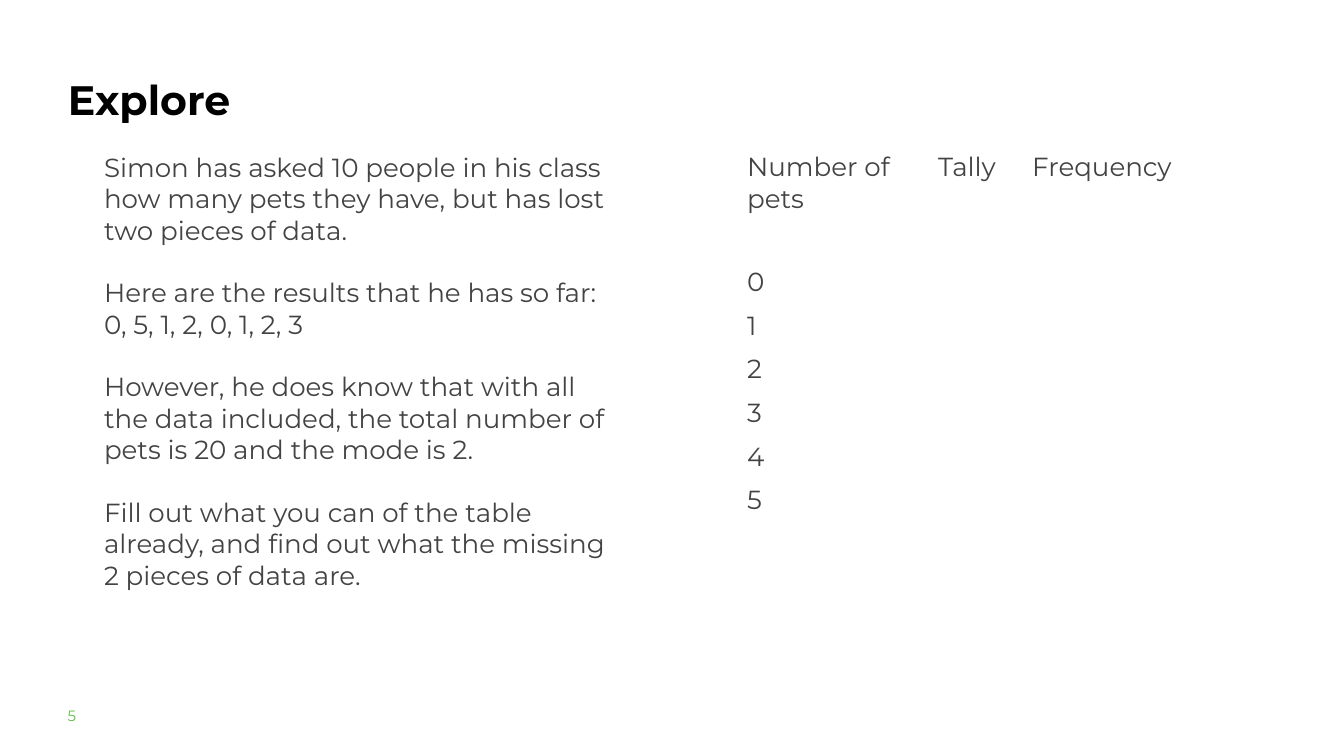
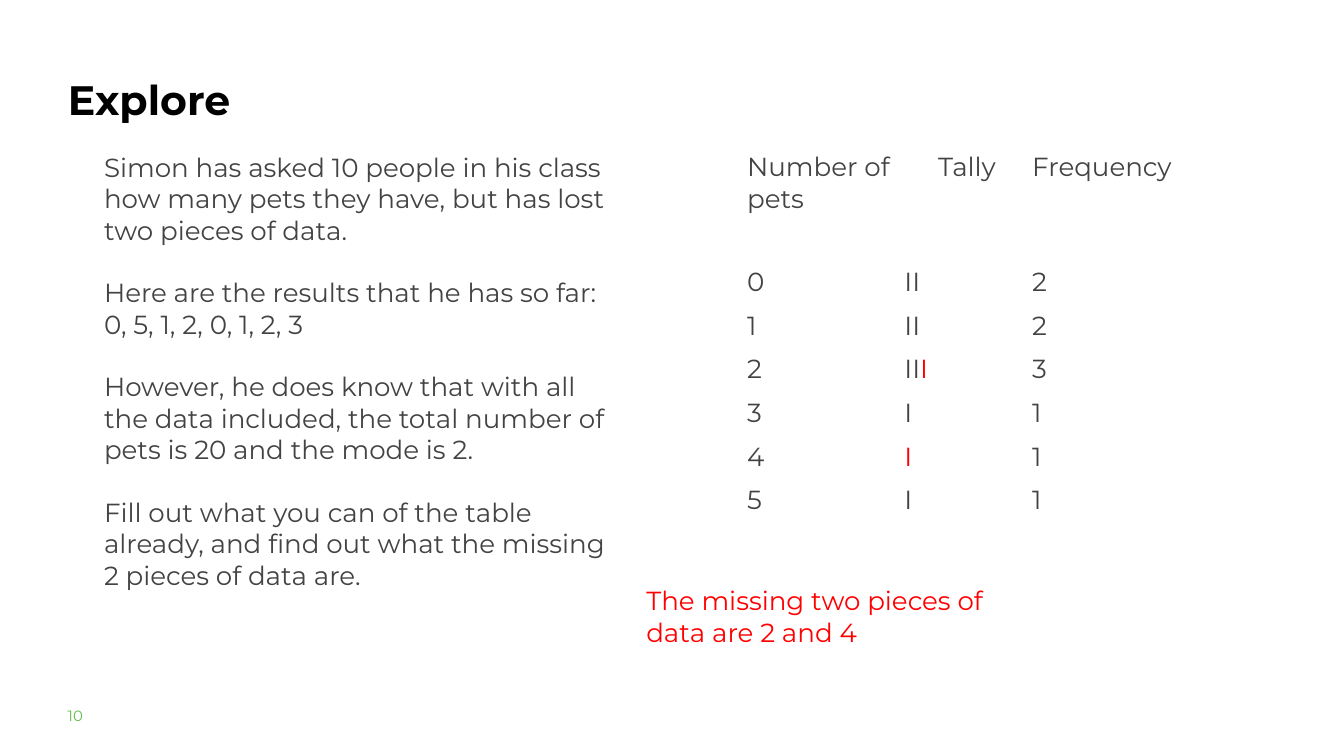
import pptx
import pptx.util
import pptx.dml.color

Pt = pptx.util.Pt
RGB = pptx.dml.color.RGBColor

FONT = "Montserrat"
BLACK = RGB(0x00, 0x00, 0x00)
GREY = RGB(0x43, 0x43, 0x43)
GREEN = RGB(0x65, 0xBE, 0x4B)
RED = RGB(0xFF, 0x00, 0x00)

BODY = 28
LINE = 33.6
TOP = 158.4
LEFT = 65.5
INDENT = 36

# Each group of paragraphs is set apart by one line.
TASK = [
    ["Simon has asked 10 people in his class how many pets they have, "
     "but has lost two pieces of data."],
    ["Here are the results that he has so far:", "0, 5, 1, 2, 0, 1, 2, 3"],
    ["However, he does know that with all the data included, "
     "the total number of pets is 20 and the mode is 2."],
    ["Fill out what you can of the table already, "
     "and find out what the missing 2 pieces of data are."],
]
HEADS = ["Number of pets", "Tally", "Frequency"]
COLS = [168.5, 136.8, 193.7]
HEAD_ROW, ROW = 123.1, 46.8
# Known tally, found tally and frequency for 0 to 5 pets
BLANK = [("", "", "")] * 6
SOLVED = [("II", "", "2"), ("II", "", "2"), ("II", "I", "3"),
          ("I", "", "1"), ("", "I", "1"), ("I", "", "1")]


def add_run(para, text, color, size=BODY, bold=False):
    run = para.add_run()
    run.text = text
    font = run.font
    font.name, font.size, font.bold = FONT, Pt(size), bold
    font.color.rgb = color


def add_box(slide, left, top, width, height):
    box = slide.shapes.add_textbox(Pt(left), Pt(top), Pt(width), Pt(height))
    box.text_frame.word_wrap = True
    return box.text_frame


def add_label(slide, place, text, color, size=BODY, bold=False, space=None):
    para = add_box(slide, *place).paragraphs[0]
    para.line_spacing = space
    add_run(para, text, color, size, bold)


def add_task(slide):
    frame = add_box(slide, 104.4, TOP, 560.9, 550)
    para = frame.paragraphs[0]
    for g, group in enumerate(TASK):
        for i, text in enumerate(group):
            if g or i:
                para = frame.add_paragraph()
            if g and not i:
                para.space_before = Pt(LINE)
            add_run(para, text, GREY)


def add_tally(slide, rows):
    """Draw the frequency table, with the found tally marks in red."""
    count = len(rows)
    table = slide.shapes.add_table(
        count + 1, len(COLS), Pt(793.4), Pt(TOP),
        Pt(sum(COLS)), Pt(HEAD_ROW + count * ROW)).table
    table.first_row = table.horz_banding = False
    for col, width in zip(table.columns, COLS):
        col.width = Pt(width)
    for row, height in zip(table.rows, [HEAD_ROW] + [ROW] * count):
        row.height = Pt(height)
    for cell in table.iter_cells():
        cell.fill.background()

    grid = [[[(head, GREY)] for head in HEADS]]
    for pets, (known, found, freq) in enumerate(rows):
        grid.append([[(str(pets), GREY)], [(known, GREY), (found, RED)],
                     [(freq, GREY)]])
    for r, line in enumerate(grid):
        for c, parts in enumerate(line):
            para = table.cell(r, c).text_frame.paragraphs[0]
            para.font.size = Pt(BODY)
            for text, color in parts:
                if text:
                    add_run(para, text, color)
    table.cell(0, 1).margin_left = Pt(7.2 + INDENT)


def add_slide(deck, number, rows):
    slide = deck.slides.add_slide(deck.slide_layouts[6])
    add_label(slide, (LEFT, 60.5, 511.9, 70.6), "Explore", BLACK, 44, True, 1.3)
    add_label(slide, (LEFT, 747.4, 64, 30.2), str(number), GREEN, 16, space=1.3)
    add_task(slide)
    add_tally(slide, rows)
    return slide


def main():
    deck = pptx.Presentation()
    deck.slide_width, deck.slide_height = Pt(1440), Pt(810)
    add_slide(deck, 5, BLANK)
    answer = add_slide(deck, 10, SOLVED)
    add_label(answer, (685.4, 622.8, 404.6, 74.9),
              "The missing two pieces of data are 2 and 4", RED)
    deck.save("out.pptx")


if __name__ == "__main__":
    main()
